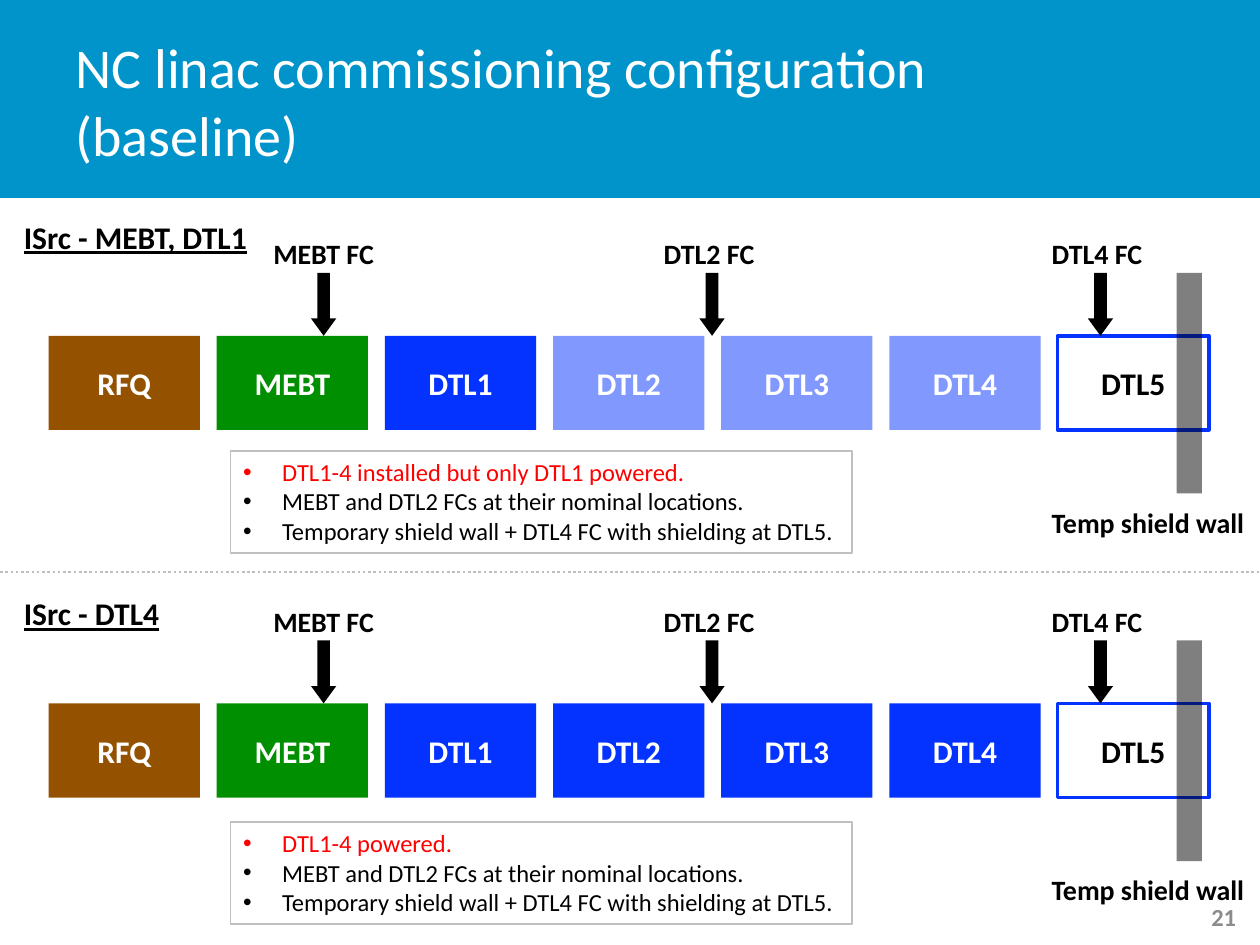
from dataclasses import dataclass

from lxml.etree import SubElement
from pptx import Presentation
from pptx.dml.color import RGBColor
from pptx.enum.dml import MSO_LINE
from pptx.enum.shapes import MSO_CONNECTOR, MSO_SHAPE
from pptx.enum.text import MSO_ANCHOR, MSO_AUTO_SIZE, PP_ALIGN
from pptx.oxml.ns import qn
from pptx.util import Cm, Pt

COLORS = {
    "band": "0094CA", "white": "FFFFFF", "black": "000000", "red": "FF0000",
    "brown": "945200", "green": "008F00", "blue": "0432FF",
    "border": "BFBFBF", "number": "8C8C8C",
}
FONT = "Calibri"
STAGE_LEFT, STAGE_PITCH, STAGE_WIDTH, STAGE_HEIGHT = 0.98, 3.39, 3.05, 1.9
ARROW_LEFT, ARROW_PITCH, ARROW_WIDTH, ARROW_HEIGHT = 6.27, 7.83, 0.51, 1.27


@dataclass
class Stage:
    name: str
    color: str


@dataclass
class FaradayCup:
    name: str
    left: float
    width: float


@dataclass
class Configuration:
    heading: str
    heading_top: float
    heading_width: float
    stage_top: float
    note_top: float
    first_note: str
    powered: tuple


STAGES = [Stage("RFQ", "brown"), Stage("MEBT", "green")]
STAGES += [Stage(f"DTL{number}", "blue") for number in range(1, 6)]
CUPS = [
    FaradayCup("MEBT FC", 5.26, 2.57),
    FaradayCup("DTL2 FC", 13.13, 2.36),
    FaradayCup("DTL4 FC", 20.95, 2.36),
]
SHARED_NOTES = [
    "MEBT and DTL2 FCs at their nominal locations.",
    "Temporary shield wall + DTL4 FC with shielding at DTL5.",
]
CONFIGURATIONS = [
    Configuration("ISrc - MEBT, DTL1", 4.27, 5.05, 6.77, 9.09,
                  "DTL1-4 installed but only DTL1 powered.",
                  ("RFQ", "MEBT", "DTL1")),
    Configuration("ISrc - DTL4", 11.86, 3.28, 14.18, 16.57, "DTL1-4 powered.",
                  ("RFQ", "MEBT", "DTL1", "DTL2", "DTL3", "DTL4")),
]


def rgb(name: str) -> RGBColor:
    return RGBColor.from_string(COLORS[name])


def style(para, size: float, color: str, bold: bool = False) -> None:
    para.font.name = FONT
    para.font.size = Pt(size)
    para.font.bold = bold
    para.font.color.rgb = rgb(color)


def add_block(page, kind, left: float, top: float, width: float, height: float,
              fill: str | None = None, alpha: int = 100,
              line: str | None = None, line_width: float = 1):
    block = page.shapes.add_shape(kind, Cm(left), Cm(top), Cm(width), Cm(height))
    block.shadow.inherit = False
    if fill:
        block.fill.solid()
        block.fill.fore_color.rgb = rgb(fill)
        if alpha < 100:
            color = block.element.spPr.find(f"{qn('a:solidFill')}/{qn('a:srgbClr')}")
            SubElement(color, qn("a:alpha"), val=str(alpha * 1000))
    else:
        block.fill.background()
    if line:
        block.line.color.rgb = rgb(line)
        block.line.width = Pt(line_width)
    else:
        block.line.fill.background()
    return block


def add_label(page, text: str, left: float, top: float, width: float,
              height: float = 0.94, size: float = 16, color: str = "black"):
    box = page.shapes.add_textbox(Cm(left), Cm(top), Cm(width), Cm(height))
    box.text_frame.word_wrap = False
    para = box.text_frame.paragraphs[0]
    para.text = text
    style(para, size, color, bold=True)
    return box


def add_stage(page, stage: Stage, index: int, top: float, powered: bool) -> None:
    outlined = stage.name == "DTL5"
    block = add_block(
        page, MSO_SHAPE.RECTANGLE, STAGE_LEFT + index * STAGE_PITCH, top,
        STAGE_WIDTH, STAGE_HEIGHT,
        fill=None if outlined else stage.color, alpha=100 if powered else 50,
        line=stage.color if outlined else None, line_width=2)
    block.text_frame.vertical_anchor = MSO_ANCHOR.MIDDLE
    para = block.text_frame.paragraphs[0]
    para.text = stage.name
    para.alignment = PP_ALIGN.CENTER
    style(para, 18, "black" if outlined else "white", bold=True)


def add_notes(page, top: float, notes: list[str]) -> None:
    box = add_block(page, MSO_SHAPE.RECTANGLE, 4.65, top, 12.52, 2.06, line="border")
    frame = box.text_frame
    frame.word_wrap = False
    frame.vertical_anchor = MSO_ANCHOR.TOP
    for index, note in enumerate(notes):
        para = frame.add_paragraph() if index else frame.paragraphs[0]
        para.text = note
        para.alignment = PP_ALIGN.LEFT
        properties = para._p.get_or_add_pPr()
        properties.set("marL", str(Cm(0.79)))
        properties.set("indent", str(-Cm(0.79)))
        SubElement(properties, qn("a:buFont"), typeface="Arial")
        SubElement(properties, qn("a:buChar"), char="•")
        style(para, 14, "black" if index else "red")


def add_configuration(page, config: Configuration) -> None:
    top = config.stage_top
    for index, stage in enumerate(STAGES):
        add_stage(page, stage, index, top, stage.name in config.powered)

    # Faraday cups above the beam line
    for index, cup in enumerate(CUPS):
        arrow = add_block(page, MSO_SHAPE.DOWN_ARROW, ARROW_LEFT + index * ARROW_PITCH,
                          top - ARROW_HEIGHT, ARROW_WIDTH, ARROW_HEIGHT, fill="black")
        arrow.adjustments[1] = 0.685
        add_label(page, cup.name, cup.left, top - 2.12, cup.width)

    # Shield wall across the last tank
    add_block(page, MSO_SHAPE.RECTANGLE, 23.72, top - ARROW_HEIGHT, 0.51, 4.45,
              fill="black", alpha=50)
    add_label(page, "Temp shield wall", 20.95, top + 3.29, 4.45)

    # Heading and notes
    heading = add_label(page, config.heading, 0.23, config.heading_top,
                        config.heading_width, 1.02, size=18)
    heading.text_frame.paragraphs[0].font.underline = True
    add_notes(page, config.note_top, [config.first_note, *SHARED_NOTES])


def add_title(page) -> None:
    title = page.shapes.title
    title.left, title.top, title.width, title.height = Cm(1.27), Cm(0.43), Cm(19.84), Cm(3.18)
    frame = title.text_frame
    frame.auto_size = MSO_AUTO_SIZE.NONE
    frame.vertical_anchor = MSO_ANCHOR.MIDDLE
    para = frame.paragraphs[0]
    para.add_run().text = "NC linac commissioning configuration"
    para.add_line_break()
    para.add_run().text = "(baseline)"
    para.alignment = PP_ALIGN.LEFT
    style(para, 32, "white")
    # The band lies behind the title
    band = add_block(page, MSO_SHAPE.RECTANGLE, 0, 0, 25.4, 3.99, fill="band")
    title.element.addprevious(band.element)


def add_divider(page) -> None:
    divider = page.shapes.add_connector(
        MSO_CONNECTOR.STRAIGHT, Cm(0), Cm(11.53), Cm(25.4), Cm(11.53))
    divider.line.color.rgb = rgb("border")
    divider.line.width = Pt(1.5)
    divider.line.dash_style = MSO_LINE.ROUND_DOT
    SubElement(divider.element.spPr, qn("a:effectLst"))


def main() -> None:
    deck = Presentation()
    deck.slide_width, deck.slide_height = Cm(25.4), Cm(19.05)
    page = deck.slides.add_slide(deck.slide_layouts[5])
    add_title(page)
    for config in CONFIGURATIONS:
        add_configuration(page, config)
    add_divider(page)

    # Page number
    number = add_label(page, "21", 19.25, 17.98, 5.92, 1.02, size=14, color="number")
    number.text_frame.word_wrap = True
    number.text_frame.vertical_anchor = MSO_ANCHOR.MIDDLE
    number.text_frame.paragraphs[0].alignment = PP_ALIGN.RIGHT
    deck.save("out.pptx")


if __name__ == "__main__":
    main()
